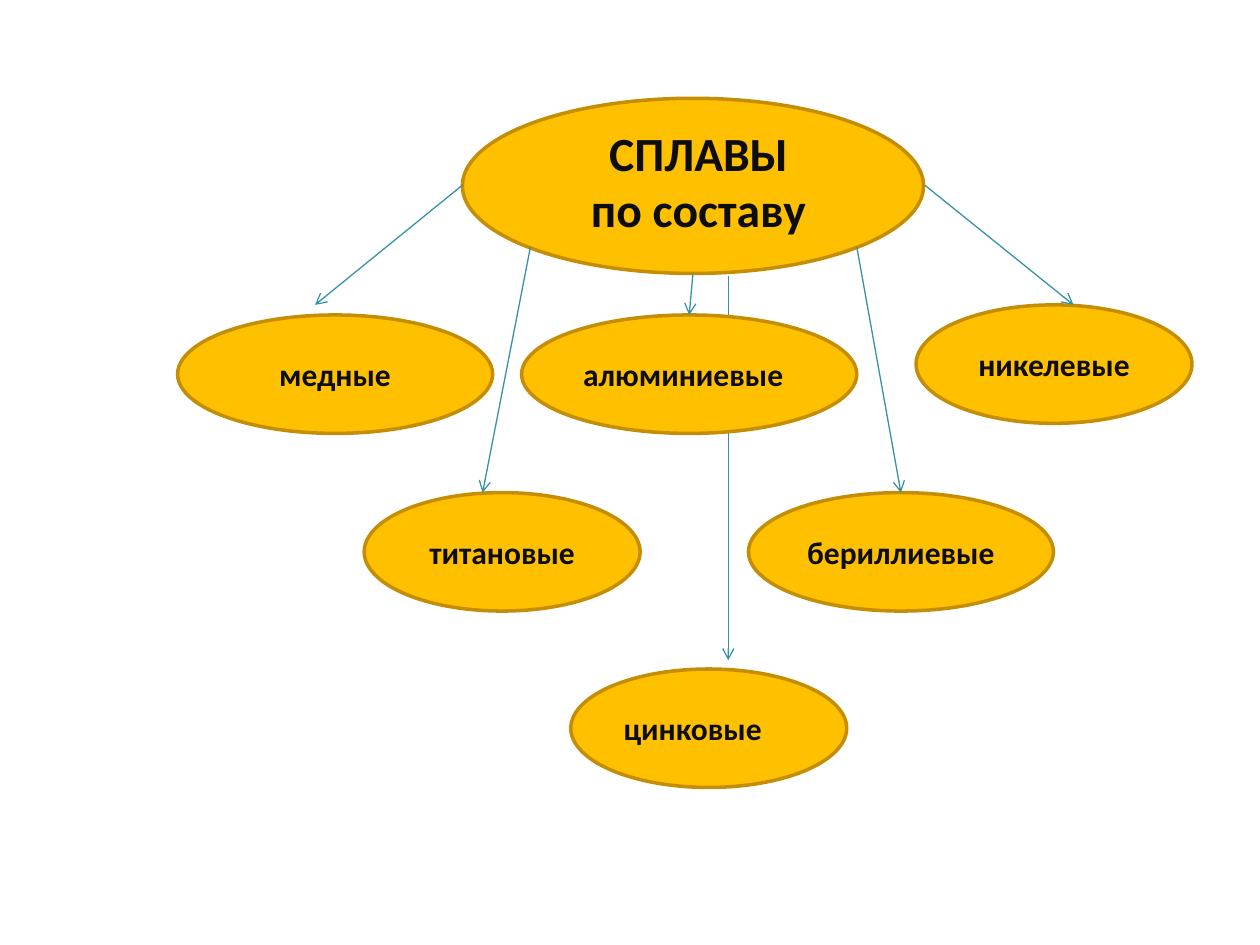
from lxml import etree
from pptx import Presentation
from pptx.dml.color import RGBColor
from pptx.enum.shapes import MSO_CONNECTOR, MSO_SHAPE
from pptx.enum.text import MSO_ANCHOR, PP_ALIGN
from pptx.oxml.ns import qn
from pptx.util import Inches, Pt

OVAL = MSO_SHAPE.OVAL
LINE = MSO_CONNECTOR.STRAIGHT
MIDDLE = MSO_ANCHOR.MIDDLE
LEFT, CENTER = PP_ALIGN.LEFT, PP_ALIGN.CENTER
COLORS = {"fill": "FFC000", "edge": "C58D01", "text": "0D0D0D", "arrow": "3891A7"}

deck = Presentation()
deck.slide_width, deck.slide_height = Inches(10), Inches(7.5)
slide = deck.slides.add_slide(deck.slide_layouts[6])


def color(name):
    return RGBColor.from_string(COLORS[name])


def add_oval(box, lines, size, align):
    oval = slide.shapes.add_shape(OVAL, *map(Inches, box))
    oval.shadow.inherit = False
    oval.fill.solid()
    oval.fill.fore_color.rgb = color("fill")
    oval.line.color.rgb = color("edge")
    oval.line.width = Pt(2)
    frame = oval.text_frame
    frame.word_wrap = True
    frame.vertical_anchor = MIDDLE
    for i, line in enumerate(lines):
        para = frame.add_paragraph() if i else frame.paragraphs[0]
        para.alignment = align
        run = para.add_run()
        run.text = line
        run.font.name = "Calibri"
        run.font.size = Pt(size)
        run.font.bold = True
        run.font.color.rgb = color("text")
    return frame


title = add_oval((3.67, 0.78, 3.66, 1.39), ["СПЛАВЫ", "по составу"], 27.2, CENTER)
for i, para in enumerate(title.paragraphs):
    para.line_spacing = 0.8
    if i:
        para.space_before = Pt(6)
    props = para._p.get_or_add_pPr()
    props.set("marL", str(Inches(0.4)))
    props.set("indent", str(Inches(-0.31)))

alloys = [
    ("цинковые", 4.53, 5.31, 2.19, LEFT),
    ("титановые", 2.89, 3.91, 2.19, CENTER),
    ("бериллиевые", 5.94, 3.91, 2.42, CENTER),
    ("никелевые", 7.27, 2.42, 2.19, CENTER),
    ("алюминиевые", 4.14, 2.5, 2.66, LEFT),
    ("медные", 1.41, 2.5, 2.5, CENTER),
]
for name, x, y, width, align in alloys:
    add_oval((x, y, width, 0.94), [name], 18, align)

links = [
    (3.67, 1.47, 2.5, 2.42, True),
    (7.34, 1.47, 8.52, 2.42, True),
    (5.5, 2.17, 5.47, 2.5, True),
    (4.21, 1.96, 3.83, 3.91, True),
    (6.8, 1.96, 7.15, 3.91, True),
    (5.78, 2.19, 5.78, 2.5, False),
    (5.78, 3.44, 5.78, 5.24, True),
]
for *ends, arrow in links:
    link = slide.shapes.add_connector(LINE, *map(Inches, ends))
    link.line.color.rgb = color("arrow")
    link.line.width = Pt(0.75)
    if arrow:
        etree.SubElement(link.line._get_or_add_ln(), qn("a:tailEnd"), type="arrow")
    etree.SubElement(link._element.spPr, qn("a:effectLst"))

deck.save("out.pptx")
